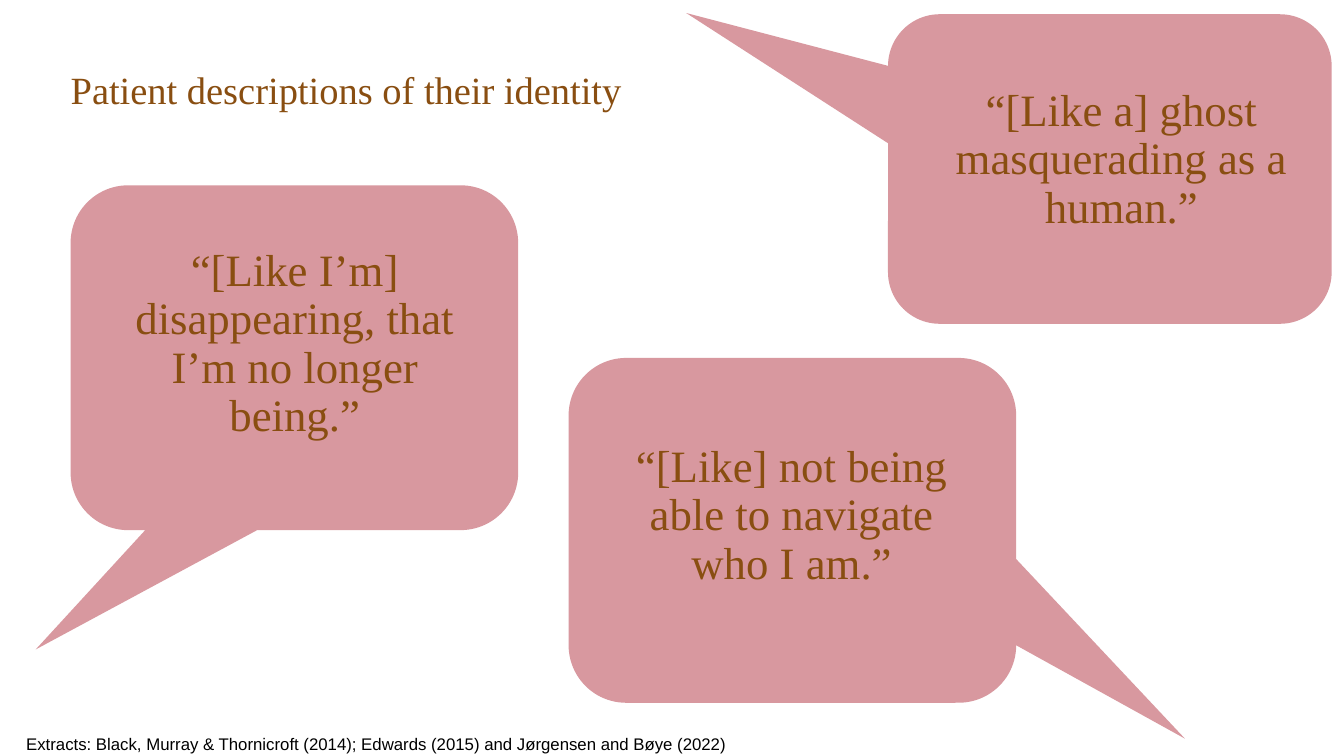
from dataclasses import dataclass

from pptx import Presentation
from pptx.dml.color import RGBColor
from pptx.enum.shapes import MSO_SHAPE
from pptx.enum.text import MSO_ANCHOR, MSO_AUTO_SIZE, PP_ALIGN
from pptx.util import Cm, Pt

CALLOUT = MSO_SHAPE.ROUNDED_RECTANGULAR_CALLOUT
TOP, BOTTOM = MSO_ANCHOR.TOP, MSO_ANCHOR.BOTTOM
LEFT, CENTER = PP_ALIGN.LEFT, PP_ALIGN.CENTER
NO_AUTOFIT = MSO_AUTO_SIZE.NONE
TITLE_ONLY = 5


@dataclass(frozen=True)
class Theme:
    bubble: RGBColor = RGBColor(0xD8, 0x98, 0x9F)
    brown: RGBColor = RGBColor(0x89, 0x4E, 0x11)
    black: RGBColor = RGBColor(0, 0, 0)
    serif: str = "Times New Roman"
    sans: str = "Arial"
    title_size: float = 27.5
    quote_size: float = 32
    source_size: float = 12


THEME = Theme()

# Content: boxes are left, top, width, height in centimetres
SLIDE_SIZE = (33.87, 19.05)
TITLE = "Patient descriptions of their identity"
TITLE_BOX = (1.78, 1.88, 30.81, 1.7)
SOURCES = "Extracts: Black, Murray & Thornicroft (2014); Edwards (2015) and Jørgensen and Bøye (2022)"
SOURCES_BOX = (0.41, 18.36, 33.3, 0.69)
QUOTES = [
    {"text": "“[Like I’m] disappearing, that I’m no longer being.”",
     "bubble": (1.78, 4.67, 11.28, 8.69), "tail": (-0.578, 0.846),
     "text_box": (2.77, 6.17, 9.32, 5.74)},
    {"text": "“[Like a] ghost masquerading as a human.”",
     "bubble": (22.38, 0.36, 11.18, 7.8), "tail": (-0.955, -0.504),
     "text_box": (23.6, 2.16, 9.32, 4.5)},
    {"text": "“[Like] not being able to navigate who I am.”",
     "bubble": (14.33, 9.02, 11.28, 8.69), "tail": (0.877, 0.604),
     "text_box": (15.29, 11.13, 9.32, 4.5)},
]
CORNER = 0.167
DISPLAY_MARGINS = (0, 0, 0, 0.79)
SOURCE_MARGINS = (0.25, 0.13, 0.25, 0.13)


def to_cm(lengths):
    return [Cm(length) for length in lengths]


def write_text(shape, text, *, size, font=THEME.serif, color=THEME.brown, align=LEFT,
               anchor=BOTTOM, margins=DISPLAY_MARGINS, line_spacing=1.0):
    frame = shape.text_frame
    frame.text = text
    frame.word_wrap = True
    frame.auto_size = NO_AUTOFIT
    frame.vertical_anchor = anchor
    (frame.margin_left, frame.margin_top,
     frame.margin_right, frame.margin_bottom) = to_cm(margins)
    paragraph = frame.paragraphs[0]
    paragraph.alignment = align
    paragraph.line_spacing = line_spacing
    paragraph.space_before = Pt(0)
    run_font = paragraph.runs[0].font
    run_font.name = font
    run_font.size = Pt(size)
    run_font.color.rgb = color


def add_quote(slide, quote):
    bubble = slide.shapes.add_shape(CALLOUT, *to_cm(quote["bubble"]))
    for index, value in enumerate((*quote["tail"], CORNER)):
        bubble.adjustments[index] = value
    bubble.shadow.inherit = False
    bubble.fill.solid()
    bubble.fill.fore_color.rgb = THEME.bubble
    bubble.line.fill.background()
    text_box = slide.shapes.add_textbox(*to_cm(quote["text_box"]))
    write_text(text_box, quote["text"], size=THEME.quote_size, align=CENTER, line_spacing=0.9)


def main():
    presentation = Presentation()
    presentation.slide_width, presentation.slide_height = to_cm(SLIDE_SIZE)
    slide = presentation.slides.add_slide(presentation.slide_layouts[TITLE_ONLY])

    # Title
    title = slide.shapes.title
    title.left, title.top, title.width, title.height = to_cm(TITLE_BOX)
    write_text(title, TITLE, size=THEME.title_size, line_spacing=0.7)

    # Speech bubbles
    for quote in QUOTES:
        add_quote(slide, quote)

    # Sources
    sources = slide.shapes.add_textbox(*to_cm(SOURCES_BOX))
    write_text(sources, SOURCES, size=THEME.source_size, font=THEME.sans,
               color=THEME.black, anchor=TOP, margins=SOURCE_MARGINS)

    presentation.save("out.pptx")


if __name__ == "__main__":
    main()
